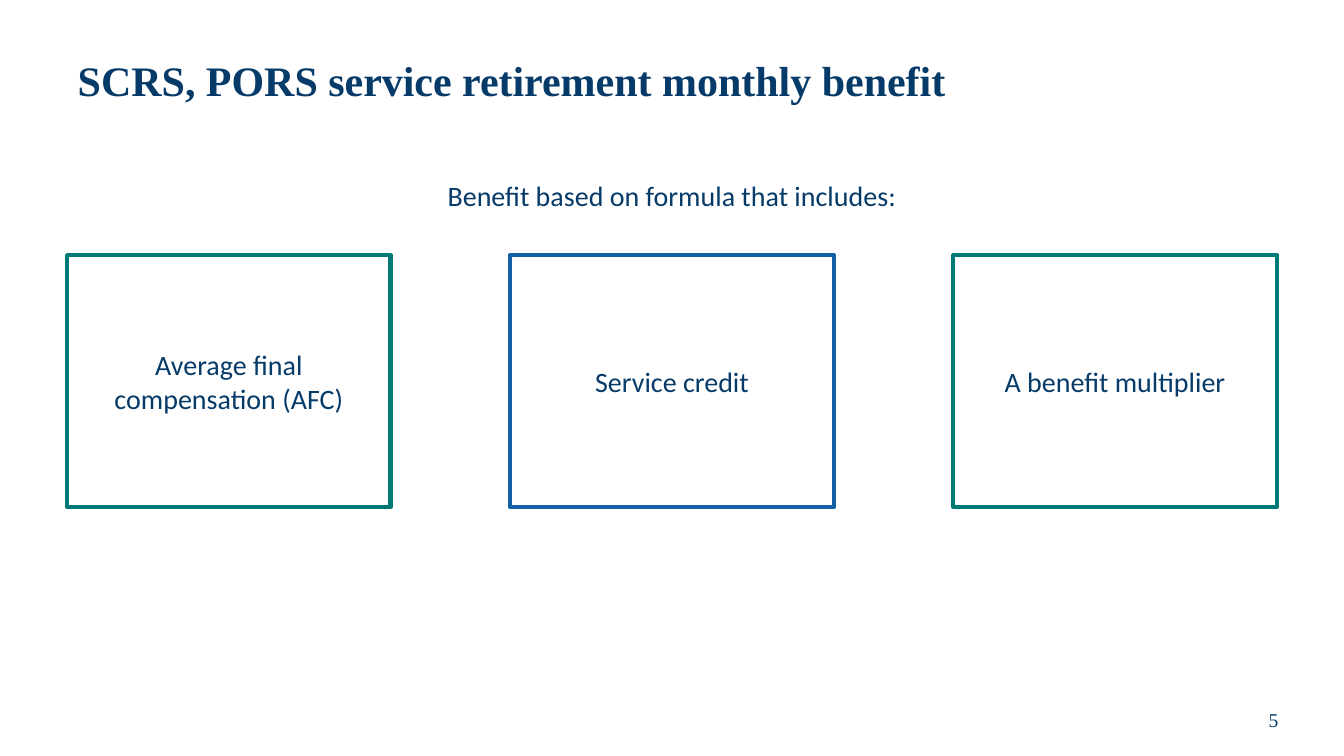
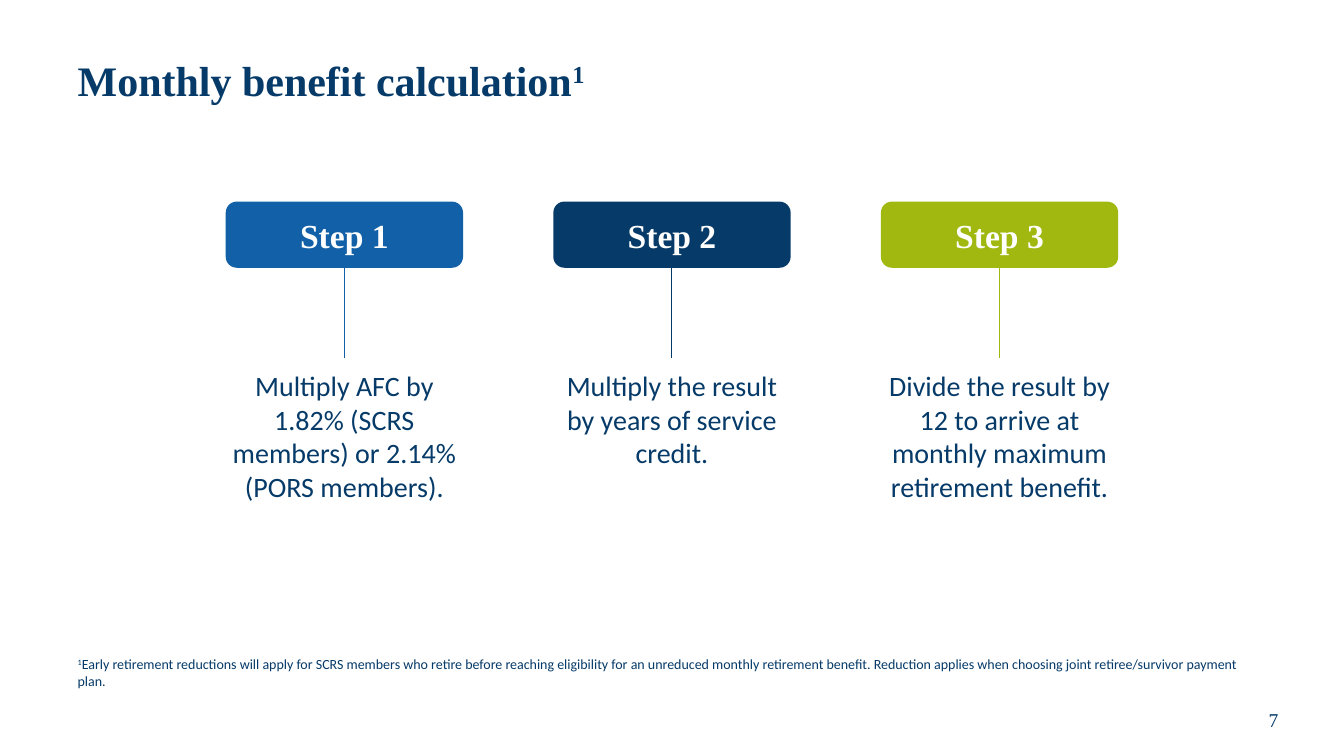
from dataclasses import dataclass

from lxml import etree
from pptx import Presentation
from pptx import util as u
from pptx.dml import color as c
from pptx.enum import shapes, text
from pptx.oxml import ns


@dataclass(frozen=True)
class Style:
    """Look of one kind of text."""
    size: int
    font: str
    color: str
    bold: bool = False
    align: text.PP_ALIGN = text.PP_ALIGN.CENTER
    anchor: text.MSO_ANCHOR = text.MSO_ANCHOR.MIDDLE
    spacing: float = 1.0
    inset: tuple = (10, 10)


class Theme:
    """Colours, fonts and text styles of the deck."""
    NAVY, BLUE, TEAL, GREEN, WHITE = "063A68", "1260A7", "007A77", "A0B810", "FFFFFF"
    SERIF, SANS = "Times New Roman", "Calibri"
    TITLE = Style(30, SERIF, NAVY, True, text.PP_ALIGN.LEFT, spacing=0.9, inset=(10, 5))
    NUMBER = Style(14, SERIF, NAVY, inset=(10, 5))
    INTRO = Style(20, SANS, NAVY, anchor=text.MSO_ANCHOR.TOP, spacing=0.9, inset=(10, 5))
    CARD = Style(20, SANS, NAVY)
    STEP = Style(24, SERIF, WHITE, True)
    DETAIL = Style(20, SANS, NAVY, anchor=text.MSO_ANCHOR.TOP)
    NOTE = Style(10, SANS, NAVY, align=text.PP_ALIGN.LEFT,
                 anchor=text.MSO_ANCHOR.TOP, inset=(10, 5))


PAGE = (1280, 720)
LEFT, WIDTH = 64, 1152


def px(length):
    """Turn pixels into EMU."""
    return u.Emu(int(length * 9525))


def rgb(value):
    """Turn a hex string into a colour."""
    return c.RGBColor.from_string(value)


def write(shape, words, style):
    """Fill a shape with styled text; parts between carets are superscript."""
    frame = shape.text_frame
    frame.word_wrap = True
    frame.auto_size = text.MSO_AUTO_SIZE.NONE
    frame.vertical_anchor = style.anchor
    frame.margin_left = frame.margin_right = px(style.inset[0])
    frame.margin_top = frame.margin_bottom = px(style.inset[1])
    para = frame.paragraphs[0]
    para.alignment = style.align
    para.line_spacing = style.spacing
    for index, part in enumerate(words.split("^")):
        if not part:
            continue
        span = para.add_run()
        span.text = part
        span.font.size = u.Pt(style.size)
        span.font.name = style.font
        span.font.bold = style.bold
        span.font.color.rgb = rgb(style.color)
        if index % 2:
            span.font._element.set("baseline", "30000")


def add_text(page, box, words, style):
    """Place a text box."""
    write(page.shapes.add_textbox(*map(px, box)), words, style)


def add_panel(page, kind, box, words, style, fill=None, line=None):
    """Place a preset shape with text, filled or outlined."""
    panel = page.shapes.add_shape(kind, *map(px, box))
    panel.shadow.inherit = False
    if fill:
        panel.fill.solid()
        panel.fill.fore_color.rgb = rgb(fill)
    else:
        panel.fill.background()
    if line:
        panel.line.color.rgb = rgb(line)
        panel.line.width = u.Pt(3)
    else:
        panel.line.fill.background()
    write(panel, words, style)


def add_stem(page, x, top, bottom, color):
    """Draw a thin vertical line."""
    stem = page.shapes.add_connector(
        shapes.MSO_CONNECTOR.STRAIGHT, px(x), px(top), px(x), px(bottom))
    stem.line.color.rgb = rgb(color)
    stem.line.width = u.Pt(0.75)
    etree.SubElement(stem._element.spPr, ns.qn("a:effectLst"))


def add_page(deck, title, number):
    """Start a slide with its title and page number."""
    page = deck.slides.add_slide(deck.slide_layouts[5])
    heading = page.shapes.title
    heading.left, heading.top, heading.width, heading.height = map(px, (LEFT, 24, WIDTH, 110))
    write(heading, title, Theme.TITLE)
    add_text(page, (1157, 661, 112, 48), number, Theme.NUMBER)
    return page


def add_cards(page, box, cards):
    """Spread outlined cards evenly across a box."""
    left, top, width, height = box
    card_width = 308
    pitch = (width - card_width) / (len(cards) - 1)
    for index, (words, color) in enumerate(cards):
        add_panel(page, shapes.MSO_SHAPE.RECTANGLE,
                  (left + index * pitch, top, card_width, height),
                  words, Theme.CARD, line=color)


def add_step(page, box, label, detail, color):
    """Place one step: a label, a stem and its explanation."""
    left, top, width, height = box
    margin, label_height, detail_drop = 7, 63, 149
    add_stem(page, left + width / 2, top + label_height, top + detail_drop, color)
    add_panel(page, shapes.MSO_SHAPE.ROUNDED_RECTANGLE,
              (left + margin, top, width - 2 * margin, label_height),
              label, Theme.STEP, fill=color)
    add_text(page, (left, top + detail_drop, width, height - detail_drop),
             detail, Theme.DETAIL)


def build_formula(deck):
    """Build the slide on the parts of the formula."""
    page = add_page(deck, "SCRS, PORS service retirement monthly benefit", "5")
    add_text(page, (LEFT, 169, WIDTH, 48),
             "Benefit based on formula that includes:", Theme.INTRO)
    add_cards(page, (LEFT, 243, WIDTH, 240), [
        ("Average final compensation (AFC)", Theme.TEAL),
        ("Service credit", Theme.BLUE),
        ("A benefit multiplier", Theme.TEAL),
    ])


def build_calculation(deck):
    """Build the slide on the steps of the calculation."""
    page = add_page(deck, "Monthly benefit calculation^1^", "7")
    steps = [
        ("Multiply AFC by 1.82% (SCRS members) or 2.14% (PORS members).", Theme.BLUE),
        ("Multiply the result by years of service credit.", Theme.NAVY),
        ("Divide the result by 12 to arrive at monthly maximum retirement benefit.",
         Theme.GREEN),
    ]
    for index, (detail, color) in enumerate(steps):
        add_step(page, (208 + index * 312, 192, 240, 287),
                 f"Step {index + 1}", detail, color)
    add_text(page, (LEFT, 619, WIDTH, 42),
             "^1^Early retirement reductions will apply for SCRS members who retire before "
             "reaching eligibility for an unreduced monthly retirement benefit. Reduction "
             "applies when choosing joint retiree/survivor payment plan.", Theme.NOTE)


def main():
    """Build and save the deck."""
    deck = Presentation()
    deck.slide_width, deck.slide_height = map(px, PAGE)
    build_formula(deck)
    build_calculation(deck)
    deck.save("out.pptx")


if __name__ == "__main__":
    main()
